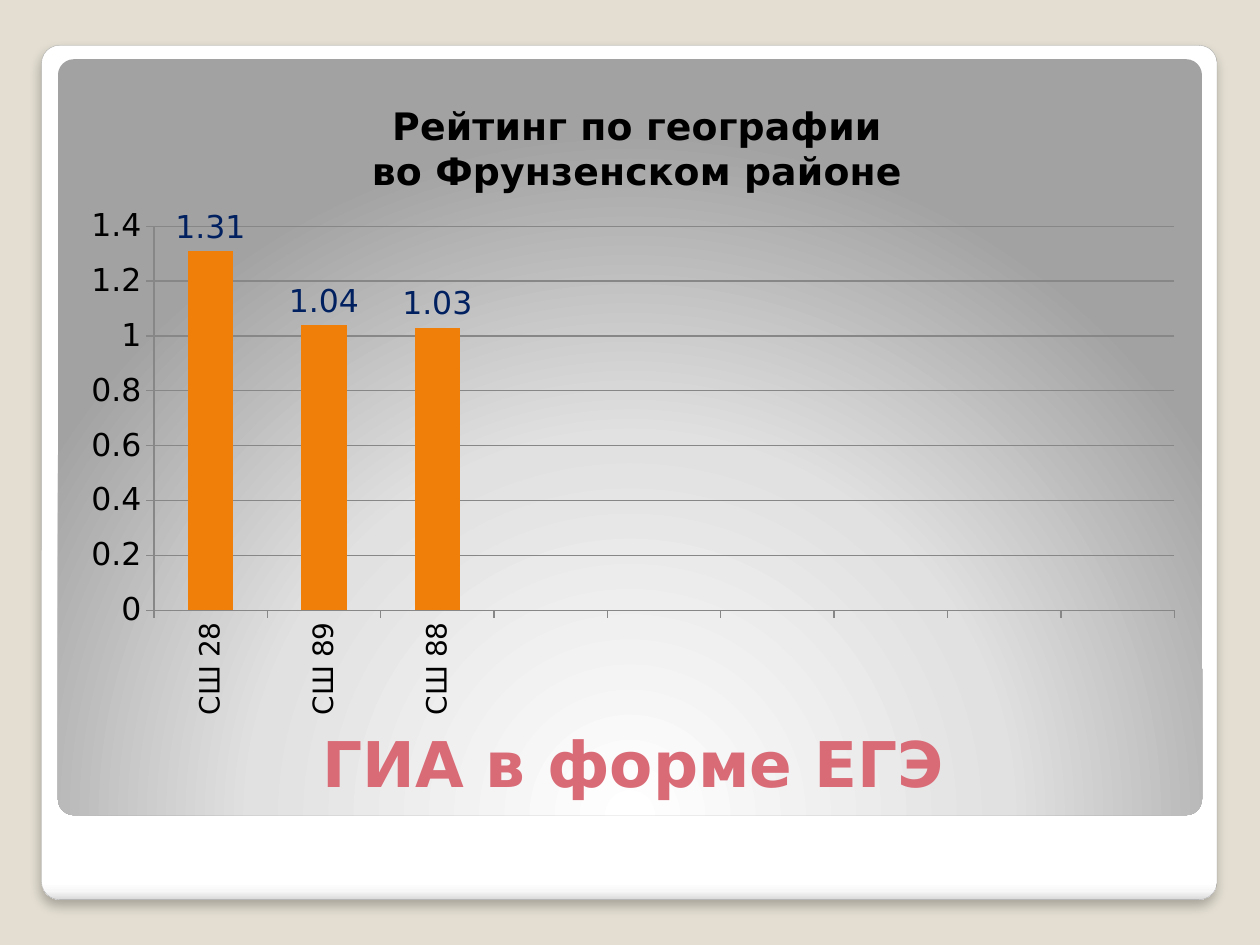
from lxml import etree
from pptx import Presentation
from pptx.chart.data import CategoryChartData
from pptx.dml.color import RGBColor
from pptx.enum import chart as ch, shapes, text
from pptx.oxml import parse_xml
from pptx.oxml.ns import nsdecls, qn
from pptx.util import Inches, Pt

HEADING = "ГИА в форме ЕГЭ"
CHART_TITLE = "Рейтинг по географии\nво Фрунзенском районе"
RATINGS = [("СШ 28", 1.31), ("СШ 89", 1.04), ("СШ 88", 1.03)]
SLOTS = 9  # category places on the axis, the last ones empty

THEME = {
    "font": "DejaVu Sans", "background": "E3DED1", "heading": "D96B77",
    "text": "000000", "bar": "F07F09", "label": "002060", "grid": "878787",
    "heading_size": 36, "title_size": 21.6, "size": 18, "category_size": 16,
}
CARDS = [
    {"at": (0.33, 0.36, 9.33, 6.78),
     "stops": [(0, "FFFFFF"), (98, "FFFFFF"), (99, "F7F7F7"), (100, "DADADA")],
     "direction": '<a:lin ang="5400000" scaled="0"/>',
     "edge": "A4A4A4", "shadow": True},
    {"at": (0.46, 0.47, 9.08, 6),
     "stops": [(0, "FFFFFF"), (55, "E1E1E1"), (100, "A2A2A2")],
     "direction": '<a:path path="circle"><a:fillToRect l="50000" t="175000" '
                  'r="50000" b="-75000"/></a:path>',
     "edge": None, "shadow": False},
]
HEADING_AT = (0.55, 5.23, 8.95, 1.17)
CHART_AT = (0.55, 0.58, 8.95, 5.2)
PLOT_LAYOUT = {"x": 0.075, "y": 0.234, "w": 0.905, "h": 0.586}
TITLE_LAYOUT = {"x": 0.265, "y": 0.04}


def rgb(name):
    return RGBColor.from_string(THEME.get(name, name))


def set_font(font, size, color, bold=False):
    values = {"name": THEME["font"], "size": Pt(THEME[size]), "bold": bold}
    for key, value in values.items():
        setattr(font, key, value)
    font.color.rgb = rgb(color)


def add_card(slide, card):
    shape = slide.shapes.add_shape(
        shapes.MSO_SHAPE.ROUNDED_RECTANGLE, *map(Inches, card["at"]))
    shape.adjustments[0] = 0.021
    stops = "".join(f'<a:gs pos="{pos * 1000}"><a:srgbClr val="{color}"/></a:gs>'
                    for pos, color in card["stops"])
    shape.element.spPr.append(parse_xml(
        f'<a:gradFill {nsdecls("a")} rotWithShape="1"><a:gsLst>{stops}</a:gsLst>'
        f'{card["direction"]}</a:gradFill>'))
    if card["edge"]:
        shape.line.color.rgb = rgb(card["edge"])
        shape.line.width = Pt(0.16)
    else:
        shape.line.fill.background()
    shape.shadow.inherit = False
    if card["shadow"]:
        shape.element.spPr.find(qn("a:effectLst")).append(parse_xml(
            f'<a:outerShdw {nsdecls("a")} blurRad="{Pt(6)}" dist="{Pt(4)}" '
            'dir="5400000" algn="t" rotWithShape="0"><a:srgbClr val="000000">'
            '<a:alpha val="25000"/></a:srgbClr></a:outerShdw>'))


def set_layout(parent, before, values, inner=False):
    """Place a chart part by fractions of the chart area."""
    for old in parent.findall(qn("c:layout")):
        parent.remove(old)
    layout = etree.Element(qn("c:layout"))
    manual = etree.SubElement(layout, qn("c:manualLayout"))
    if inner:
        etree.SubElement(manual, qn("c:layoutTarget")).set("val", "inner")
    for key in "xy":
        etree.SubElement(manual, qn(f"c:{key}Mode")).set("val", "edge")
    for key, value in values.items():
        etree.SubElement(manual, qn(f"c:{key}")).set("val", str(value))
    parent.find(qn(before)).addprevious(layout)


def add_ratings(slide):
    empty = SLOTS - len(RATINGS)
    data = CategoryChartData()
    data.categories = [school for school, _ in RATINGS] + [""] * empty
    data.add_series("Series 1", [rating for _, rating in RATINGS] + [None] * empty)
    chart = slide.shapes.add_chart(
        ch.XL_CHART_TYPE.COLUMN_CLUSTERED, *map(Inches, CHART_AT), data).chart
    set_font(chart.font, "size", "text")
    chart.has_legend = False

    title = chart.chart_title
    title.text_frame.text = CHART_TITLE
    for paragraph in title.text_frame.paragraphs:
        set_font(paragraph.runs[0].font, "title_size", "text", True)
    set_layout(title._element, "c:overlay", TITLE_LAYOUT)

    plot = chart.plots[0]
    plot.gap_width = 150
    plot.vary_by_categories = False
    bars = plot.series[0]
    bars.format.fill.solid()
    bars.format.fill.fore_color.rgb = rgb("bar")
    labels = bars.data_labels
    labels.show_value = True
    labels.position = ch.XL_LABEL_POSITION.OUTSIDE_END
    set_font(labels.font, "size", "label")
    set_layout(chart._chartSpace.chart.plotArea, "c:barChart", PLOT_LAYOUT, True)

    schools, scale = chart.category_axis, chart.value_axis
    scale.minimum_scale, scale.maximum_scale, scale.major_unit = 0, 1.4, 0.2
    scale.has_major_gridlines = True
    for axis, size in ((schools, "category_size"), (scale, "size")):
        axis.major_tick_mark = ch.XL_TICK_MARK.OUTSIDE
        set_font(axis.tick_labels.font, size, "text")
    for part in (schools, scale, scale.major_gridlines):
        part.format.line.color.rgb = rgb("grid")
        part.format.line.width = Pt(0.75)
    turned = schools._element.find(qn("c:txPr")).find(qn("a:bodyPr"))
    turned.set("rot", "-5400000")
    turned.set("vert", "horz")


def main():
    prs = Presentation()
    prs.slide_width, prs.slide_height = Inches(10), Inches(7.5)
    slide = prs.slides.add_slide(prs.slide_layouts[5])
    slide.background.fill.solid()
    slide.background.fill.fore_color.rgb = rgb("background")
    for card in CARDS:
        add_card(slide, card)

    heading = slide.shapes.title
    slide.shapes._spTree.append(heading.element)  # in front of the cards
    for key, value in zip(("left", "top", "width", "height"), HEADING_AT):
        setattr(heading, key, Inches(value))
    frame = heading.text_frame
    frame.text = HEADING
    frame.vertical_anchor = text.MSO_ANCHOR.BOTTOM
    frame.paragraphs[0].alignment = text.PP_ALIGN.CENTER
    set_font(frame.paragraphs[0].runs[0].font, "heading_size", "heading", True)

    add_ratings(slide)
    prs.save("out.pptx")


if __name__ == "__main__":
    main()
